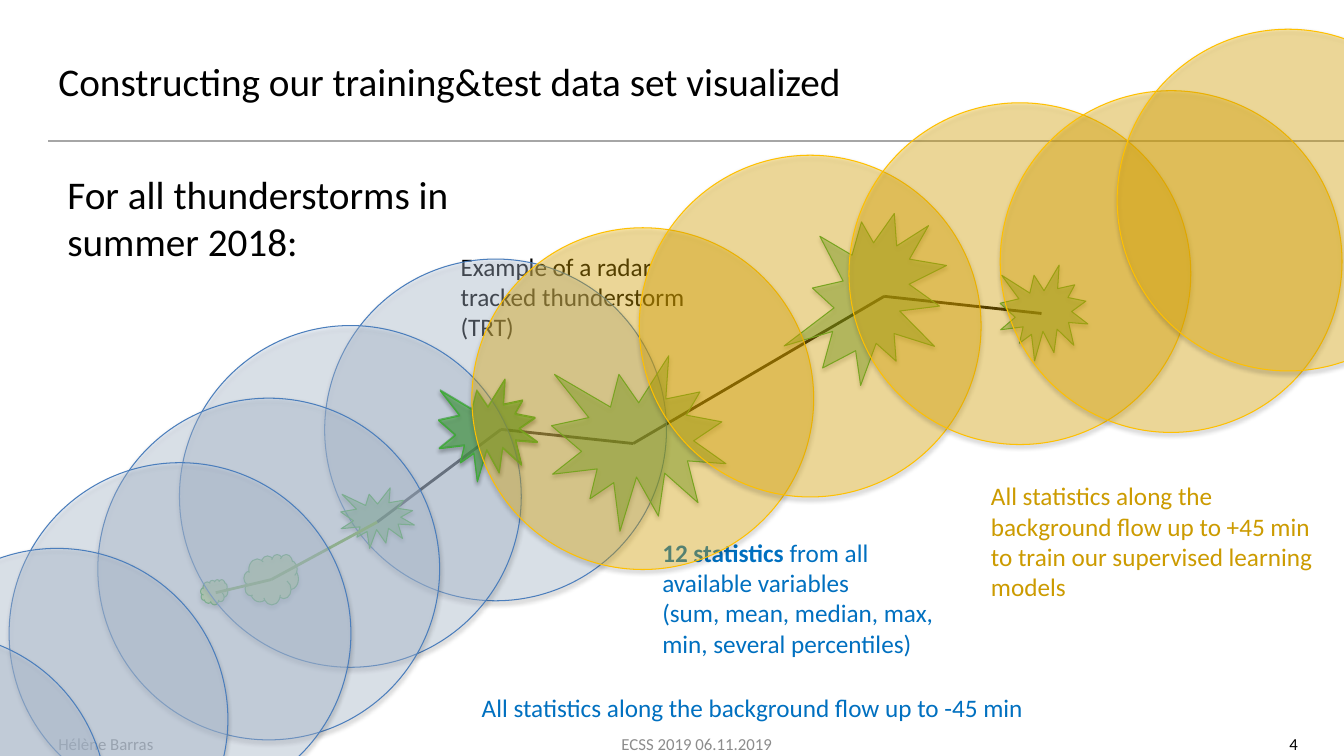
from itertools import pairwise

from lxml.etree import SubElement
from pptx import Presentation
from pptx.dml.color import RGBColor
from pptx.enum.shapes import MSO_CONNECTOR as CONN, MSO_SHAPE as SHAPE
from pptx.enum.text import MSO_ANCHOR as ANCHOR, MSO_AUTO_SIZE as FIT, PP_ALIGN as ALIGN
from pptx.oxml.ns import qn
from pptx.util import Emu, Pt

PX = 9144
FONT = "Calibri"
BLACK, GREY, BLUE, GOLD = "000000", "8C8C8C", "0070C0", "CC9B00"
LEAF, LIME, PATH_GREEN = "3FAB37", "A4F71D", "72AF2F"
PAST, PAST_EDGE, FUTURE = "C6D9F1", "4B7EBC", "FFC000"
DIAMETER = 339


def px(n):
    """Turn px into EMU."""
    return Emu(n * PX)


def rgb(color):
    """Turn a hex string into a colour."""
    return RGBColor.from_string(color)


def write(tf, paras, size, color, align=ALIGN.LEFT):
    """Fill a text frame; each paragraph is a list of (text, bold) runs."""
    tf.word_wrap = True
    for i, runs in enumerate(paras):
        p = tf.paragraphs[0] if i == 0 else tf.add_paragraph()
        p.alignment = align
        for text, bold in runs:
            r = p.add_run()
            r.text = text
            r.font.name, r.font.size, r.font.bold = FONT, Pt(size), bold
            r.font.color.rgb = rgb(color)


def add_label(slide, box, paras, size, color):
    """Add a top-anchored text box that grows with its text."""
    tf = slide.shapes.add_textbox(*map(px, box)).text_frame
    write(tf, paras, size, color)
    tf.auto_size = FIT.SHAPE_TO_FIT_TEXT


def add_line(slide, start, end, color, width):
    """Add a plain straight line without shadow."""
    sp = slide.shapes.add_connector(CONN.STRAIGHT, *map(px, start + end))
    sp.line.color.rgb = rgb(color)
    sp.line.width = Pt(width)
    SubElement(sp._element.spPr, qn("a:effectLst"))


def add_track(slide, points, color):
    """Join the storm positions in order."""
    for start, end in pairwise(points):
        add_line(slide, start, end, color, 2)


def add_glass(slide, kind, box, fill, opacity, edge, rotation=0):
    """Add a see-through shape with a soft shadow below it."""
    sp = slide.shapes.add_shape(kind, *map(px, box))
    sp.rotation = rotation
    sp.fill.solid()
    sp.fill.fore_color.rgb = rgb(fill)
    sp.line.color.rgb = rgb(edge)
    sp.line.width = Pt(0.75)
    sp.shadow.inherit = False
    spPr = sp._element.spPr
    fill_clr = spPr.find(qn("a:solidFill")).find(qn("a:srgbClr"))
    SubElement(fill_clr, qn("a:alpha"), val=str(opacity * 1000))
    shadow = SubElement(spPr.find(qn("a:effectLst")), qn("a:outerShdw"),
                        blurRad="40000", dist="23000", dir="5400000", rotWithShape="0")
    clr = SubElement(shadow, qn("a:srgbClr"), val=BLACK)
    SubElement(clr, qn("a:alpha"), val="35000")


def add_circles(slide, corners, fill, edge):
    """Add equal circles of surrounding area at the given corners."""
    for x, y in corners:
        add_glass(slide, SHAPE.OVAL, (x, y, DIAMETER, DIAMETER), fill, 33, edge)


def add_storm(slide, box, rotation=0):
    """Add a jagged storm cell."""
    add_glass(slide, SHAPE.EXPLOSION1, box, LEAF, 38, LEAF, rotation)


def add_frame(slide, box):
    """Add the title, its rule and the footer line."""
    x, y, w, h = box
    add_line(slide, (x + 48, y + 140), (x + w, y + 140), "A6A6A6", 1.5)
    footers = [
        (480, 422, "ECSS 2019 06.11.2019", GREY, ALIGN.CENTER),
        (48, 422, "Hélène Barras", GREY, ALIGN.LEFT),
        (986, 311, "4", BLACK, ALIGN.RIGHT),
    ]
    for left, width, text, color, align in footers:
        tf = slide.shapes.add_textbox(px(x + left), px(y + h - 32), px(width), px(40)).text_frame
        tf.vertical_anchor = ANCHOR.MIDDLE
        write(tf, [[(text, False)]], 12, color, align)
    title = slide.shapes.title
    title.left, title.top, title.width, title.height = map(px, (x + 48, y + 23, 942, 115))
    tf = title.text_frame
    tf.auto_size, tf.vertical_anchor = FIT.NONE, ANCHOR.MIDDLE
    write(tf, [[("Constructing our training&test data set visualized", False)]], 28, BLACK)


def add_diagram(slide, box):
    """Draw the storm track with its past and future surroundings."""
    x, y = box[:2]

    def at(left, top, *size):
        return (x + left, y + top, *size)

    add_track(slide, [at(374, 518), at(497, 426), at(628, 440), at(877, 294), at(1033, 311)], BLACK)
    add_label(slide, at(447, 244, 274, 101),
              [[("Example of a radar tracked thunderstorm (TRT)", False)]], 18, BLACK)
    add_circles(slide, [at(322, 257)], PAST, PAST_EDGE)
    add_storm(slide, at(338, 484, 73, 60))
    add_storm(slide, at(435, 376, 98, 101))
    add_storm(slide, at(547, 353, 173, 174))
    add_storm(slide, at(781, 219, 173, 150), 296)
    add_storm(slide, at(992, 263, 87, 95))
    for cloud in (at(242, 550, 54, 50), at(199, 575, 27, 25)):
        add_glass(slide, SHAPE.CLOUD, cloud, LIME, 40, LEAF)
    add_track(slide, [at(214, 588), at(269, 575), at(374, 518)], PATH_GREEN)
    add_label(slide, at(647, 528, 308, 131),
              [[("12 statistics ", True), ("from all available variables", False)],
               [("(sum, mean, median, max, min, several percentiles)", False)]], 18, BLUE)
    add_circles(slide, [at(178, 323), at(97, 395), at(9, 459), at(-113, 544), at(-233, 628)],
                PAST, PAST_EDGE)
    add_storm(slide, at(435, 377, 98, 101))
    add_circles(slide, [at(468, 226), at(634, 154), at(842, 102), at(992, 90), at(1108, 29)],
                FUTURE, FUTURE)


def add_notes_on_flow(slide, box):
    """Add the two flow captions and the lead-in."""
    x, y = box[:2]
    add_label(slide, (x + 468, y + 682, 627, 40),
              [[("All statistics along the background flow up to -45 min", False)]], 18, BLUE)
    add_label(slide, (x + 973, y + 472, 358, 131),
              [[("All statistics along the background flow up to +45 min "
                 "to train our supervised learning models", False)]], 18, GOLD)
    add_label(slide, (x + 57, y + 164, 520, 104),
              [[("For all thunderstorms in summer 2018:", False)]], 28, BLACK)


def main():
    """Build and save the slide."""
    prs = Presentation()
    page = (0, 0, 1333, 750)
    prs.slide_width, prs.slide_height = px(page[2]), px(page[3])
    slide = prs.slides.add_slide(prs.slide_layouts[5])
    add_frame(slide, page)
    add_diagram(slide, page)
    add_notes_on_flow(slide, page)
    prs.save("out.pptx")


if __name__ == "__main__":
    main()
